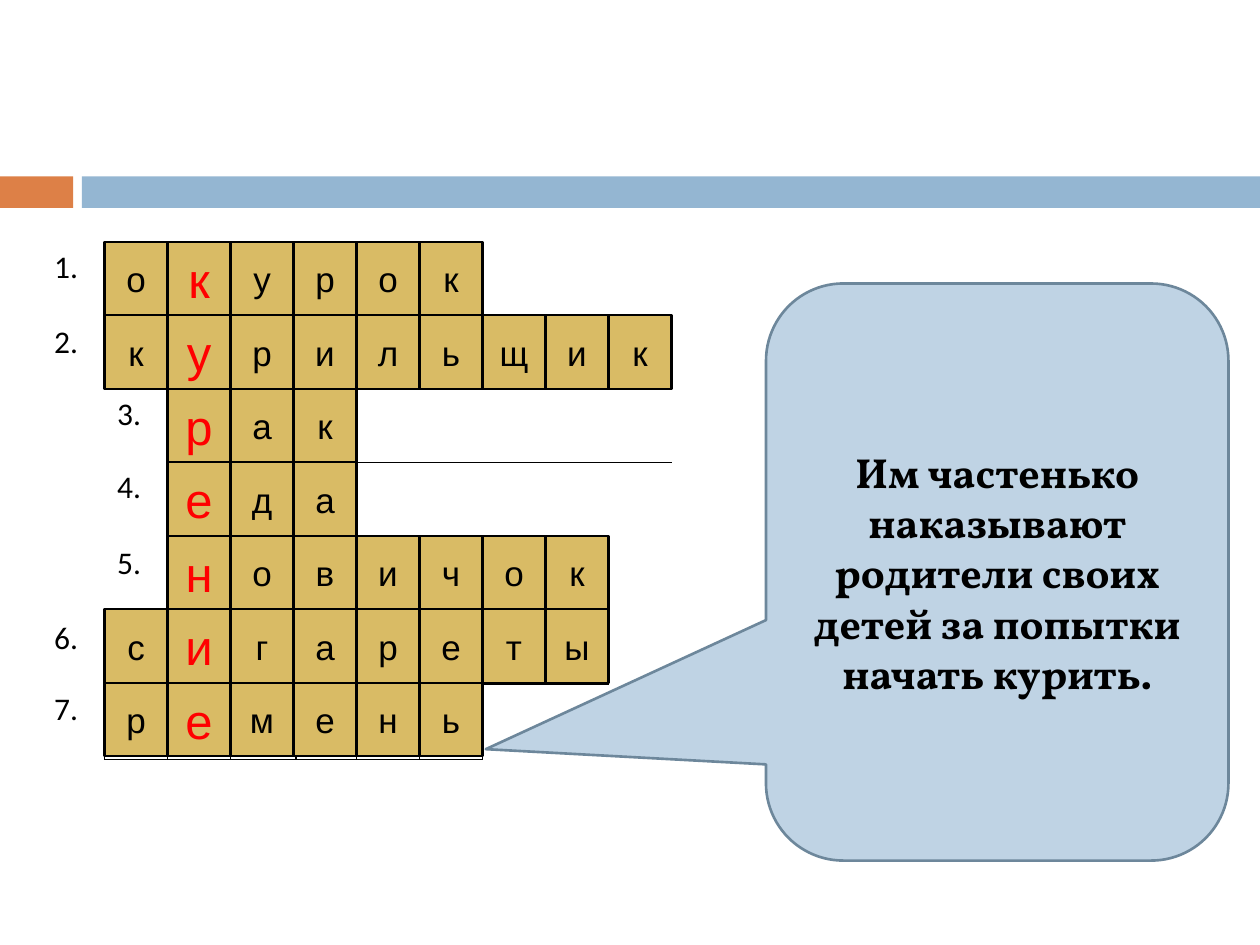
from dataclasses import dataclass

from lxml import etree
from pptx import Presentation
from pptx.dml.color import RGBColor
from pptx.enum.shapes import MSO_SHAPE
from pptx.enum.text import MSO_ANCHOR, PP_ALIGN
from pptx.oxml.ns import qn
from pptx.util import Inches, Pt

RECT = MSO_SHAPE.RECTANGLE
CALLOUT = MSO_SHAPE.ROUNDED_RECTANGULAR_CALLOUT
MIDDLE = MSO_ANCHOR.MIDDLE
CENTER = PP_ALIGN.CENTER
NO_TABLE_STYLE = "{2D5ABB26-0587-4C30-8999-92F81FD0307C}"


@dataclass(frozen=True)
class Theme:
    accent: str = "DD8047"
    band: str = "94B6D2"
    tile: str = "D9BB65"
    bubble: str = "BFD3E4"
    bubble_line: str = "6D879B"
    ink: str = "000000"
    keyword: str = "FF0000"
    number_font: str = "Calibri"
    letter_font: str = "Arial"
    clue_font: str = "Vollkorn"
    number_size: int = 18
    letter_size: int = 20
    keyword_size: int = 28
    clue_size: int = 24


THEME = Theme()

# Crossword grid, in inches: the first column holds the row numbers
GRID_LEFT, GRID_TOP = 0.33, 1.92
COL, ROW = 0.5, 7 / 12
KEY_COL = 2
COL_WIDTHS = [0.5, 0.5, 0.5, 0.52, 0.48] + [0.5] * 5
ROW_HEIGHTS = [0.6, 0.57, 0.58, 0.6, 0.6, 0.56, 0.6]

# Each answer with the column of its first letter
ANSWERS = [("окурок", 1), ("курильщик", 1), ("рак", 2), ("еда", 2),
           ("новичок", 2), ("сигареты", 1), ("ремень", 1)]

# Cell edges per row: l, r, t, b; "-" stands for none
ALL = "lrtb"
EDGES = [
    ["r"] + [ALL] * 6 + ["lrb", "b", "b"],
    ["r"] + [ALL] * 9,
    ["-", "tr"] + [ALL] * 4 + ["tb"] * 4,
    ["-", "r"] + [ALL] * 4 + ["tb"] * 3 + ["t"],
    ["-", "rb"] + [ALL] * 7 + ["l"],
    ["r"] + [ALL] * 8 + ["l"],
    ["r"] + [ALL] * 6 + ["lrt", "t", "-"],
]
CLUE = "Им частенько наказывают родители своих детей за попытки начать курить."


def add_run(p, text, font, size, color, bold=False):
    r = p.add_run()
    r.text = text
    r.font.name, r.font.size, r.font.bold = font, Pt(size), bold
    r.font.color.rgb = RGBColor.from_string(color)


def add_block(slide, kind, box, fill, line=None, width=1.0):
    s = slide.shapes.add_shape(kind, *(Inches(v) for v in box))
    s.shadow.inherit = False
    s.fill.solid()
    s.fill.fore_color.rgb = RGBColor.from_string(fill)
    if line:
        s.line.color.rgb = RGBColor.from_string(line)
        s.line.width = Pt(width)
    else:
        s.line.fill.background()
    return s


def centre_text(shape, wrap, *run):
    tf = shape.text_frame
    tf.word_wrap = wrap
    tf.vertical_anchor = MIDDLE
    p = tf.paragraphs[0]
    p.alignment = CENTER
    add_run(p, *run)


def set_edges(cell, edges):
    """Draw the named edges of a cell and clear the others."""
    props = cell._tc.get_or_add_tcPr()
    for i, side in enumerate(ALL):
        ln = etree.Element(qn(f"a:ln{side.upper()}"), w=str(Pt(1)))
        if side in edges:
            fill = etree.SubElement(ln, qn("a:solidFill"))
            etree.SubElement(fill, qn("a:srgbClr"), val=THEME.ink)
        else:
            etree.SubElement(ln, qn("a:noFill"))
        props.insert(i, ln)


def add_title_band(slide, top, height, width):
    split, gap = 0.58, 0.07
    add_block(slide, RECT, (0, top, split, height), THEME.accent)
    start = split + gap
    add_block(slide, RECT, (start, top, width - start, height), THEME.band)


def add_number_table(slide, left, top):
    box = (left, top, sum(COL_WIDTHS), sum(ROW_HEIGHTS))
    frame = slide.shapes.add_table(len(ROW_HEIGHTS), len(COL_WIDTHS),
                                   *(Inches(v) for v in box))
    table = frame.table
    table.first_row = table.horz_banding = False
    table._tbl.tblPr.find(qn("a:tableStyleId")).text = NO_TABLE_STYLE
    for column, width in zip(table.columns, COL_WIDTHS):
        column.width = Inches(width)
    for row, height in zip(table.rows, ROW_HEIGHTS):
        row.height = Inches(height)
    for r, row_edges in enumerate(EDGES):
        for c, edges in enumerate(row_edges):
            cell = table.cell(r, c)
            cell.fill.background()
            set_edges(cell, edges)
        # The number sits just before the first letter
        label = table.cell(r, ANSWERS[r][1] - 1)
        add_run(label.text_frame.paragraphs[0], f"{r + 1}.",
                THEME.number_font, THEME.number_size, THEME.ink)


def add_letter_tiles(slide, left, top):
    for row, (word, first) in enumerate(ANSWERS):
        for col, letter in enumerate(word, first):
            box = (left + col * COL, top + row * ROW, COL, ROW)
            tile = add_block(slide, RECT, box, THEME.tile, THEME.ink, 1.25)
            if col == KEY_COL:
                size, color = THEME.keyword_size, THEME.keyword
            else:
                size, color = THEME.letter_size, THEME.ink
            centre_text(tile, False, letter, THEME.letter_font, size, color)


def add_clue(slide, box):
    bubble = add_block(slide, CALLOUT, box, THEME.bubble, THEME.bubble_line, 1.5)
    for i, value in enumerate((-1.106, 0.307, 0.167)):
        bubble.adjustments[i] = value
    centre_text(bubble, True, CLUE, THEME.clue_font, THEME.clue_size,
                THEME.ink, True)


def main():
    prs = Presentation()
    prs.slide_width, prs.slide_height = Inches(10), Inches(7.5)
    slide = prs.slides.add_slide(prs.slide_layouts[6])
    add_title_band(slide, 1.4, 0.25, 10)
    add_number_table(slide, GRID_LEFT, GRID_TOP)
    add_clue(slide, (6.08, 2.25, 3.67, 4.58))
    add_letter_tiles(slide, GRID_LEFT, GRID_TOP)
    prs.save("out.pptx")


if __name__ == "__main__":
    main()
